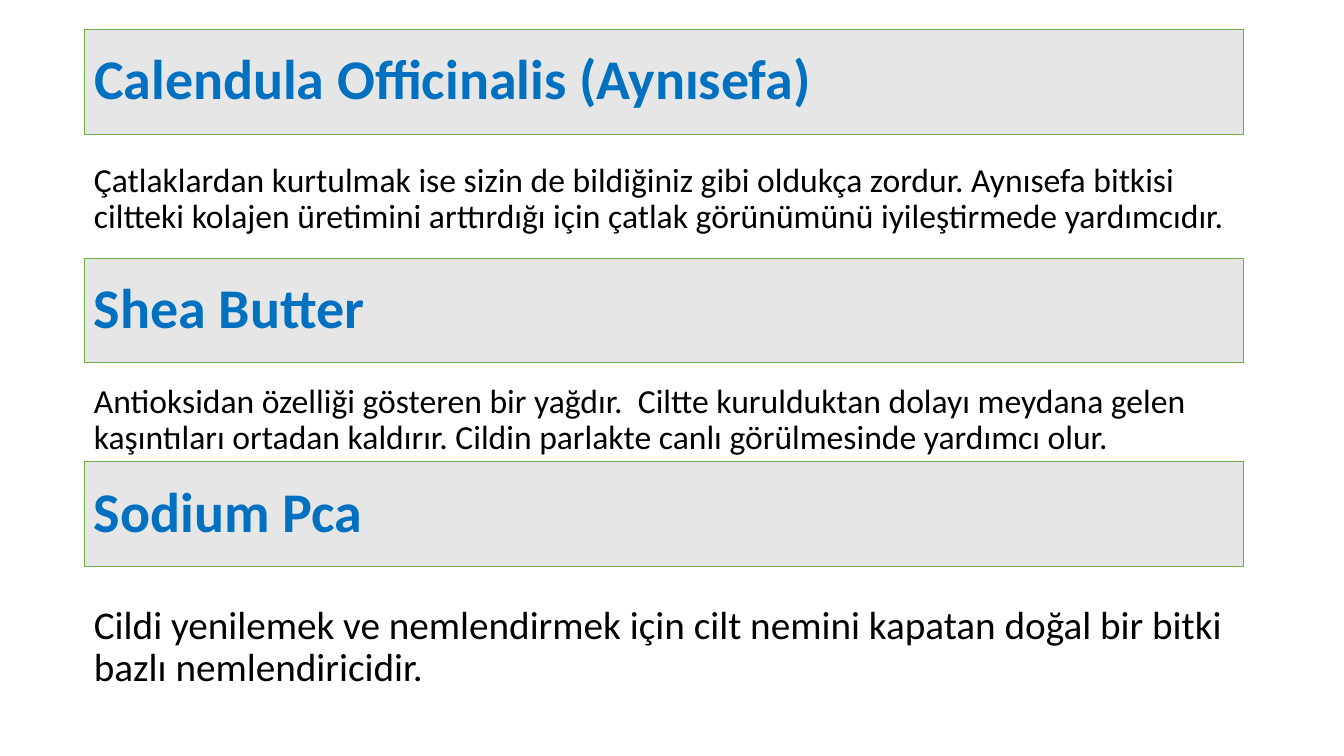
import pptx
import pptx.util
import pptx.dml.color
import pptx.enum.shapes
import pptx.enum.text

RGBColor = pptx.dml.color.RGBColor
BLUE = RGBColor(0x00, 0x70, 0xC0)
GREEN = RGBColor(0x70, 0xAD, 0x47)
GREY = RGBColor(0xE7, 0xE6, 0xE6)
BLACK = RGBColor(0x00, 0x00, 0x00)

# Shares of the slide's size, in percent
LEFT, WIDTH = 6.25, 86.25
BAND = 13.87


def write(shape, text, size=24, color=BLACK, bold=False, before=0,
          anchor=pptx.enum.text.MSO_ANCHOR.TOP):
    frame = shape.text_frame
    frame.word_wrap = True
    frame.auto_size = pptx.enum.text.MSO_AUTO_SIZE.NONE
    frame.vertical_anchor = anchor
    para = frame.paragraphs[0]
    para.alignment = pptx.enum.text.PP_ALIGN.LEFT
    para.line_spacing = 0.9
    para.space_before = pptx.util.Pt(before)
    run = para.add_run()
    run.text = text
    font = run.font
    font.name = "Calibri"
    font.size = pptx.util.Pt(size)
    font.bold = bold
    font.color.rgb = color


class Page:
    def __init__(self, deck):
        self.deck = deck
        self.slide = deck.slides.add_slide(deck.slide_layouts[5])
        self.shapes = self.slide.shapes

    def area(self, top, height):
        wide = self.deck.slide_width / 100
        high = self.deck.slide_height / 100
        return [round(n) for n in
                (LEFT * wide, top * high, WIDTH * wide, height * high)]

    def band(self, shape, text):
        shape.fill.solid()
        shape.fill.fore_color.rgb = GREY
        shape.line.color.rgb = GREEN
        shape.line.width = pptx.util.Pt(0.5)
        write(shape, text, size=40, color=BLUE, bold=True,
              anchor=pptx.enum.text.MSO_ANCHOR.MIDDLE)

    def title(self, text, top):
        shape = self.shapes.title
        shape.left, shape.top, shape.width, shape.height = self.area(top, BAND)
        self.band(shape, text)

    def head(self, text, top):
        shape = self.shapes.add_shape(
            pptx.enum.shapes.MSO_SHAPE.RECTANGLE, *self.area(top, BAND))
        shape.shadow.inherit = False
        self.band(shape, text)

    def body(self, text, top, height, size=24):
        box = self.shapes.add_textbox(*self.area(top, height))
        write(box, text, size=size, before=10)


def main():
    deck = pptx.Presentation()
    deck.slide_width = pptx.util.Inches(13.33)
    deck.slide_height = pptx.util.Inches(7.5)
    page = Page(deck)

    # Calendula
    page.title("Calendula Officinalis (Aynısefa)", 3.87)
    page.body("Çatlaklardan kurtulmak ise sizin de bildiğiniz gibi oldukça "
              "zordur. Aynısefa bitkisi ciltteki kolajen üretimini arttırdığı "
              "için çatlak görünümünü iyileştirmede yardımcıdır.", 20.93, 13.47)

    # Shea butter
    page.head("Shea Butter", 34.13)
    page.body("Antioksidan özelliği gösteren bir yağdır.  Ciltte kurulduktan "
              "dolayı meydana gelen kaşıntıları ortadan kaldırır. Cildin "
              "parlakte canlı görülmesinde yardımcı olur.", 50.13, 11.07)

    # Sodium PCA
    page.head("Sodium Pca", 61.07)
    page.body("Cildi yenilemek ve nemlendirmek için cilt nemini kapatan doğal "
              "bir bitki bazlı nemlendiricidir.", 79.47, 17.6, size=28)

    deck.save("out.pptx")


if __name__ == "__main__":
    main()
